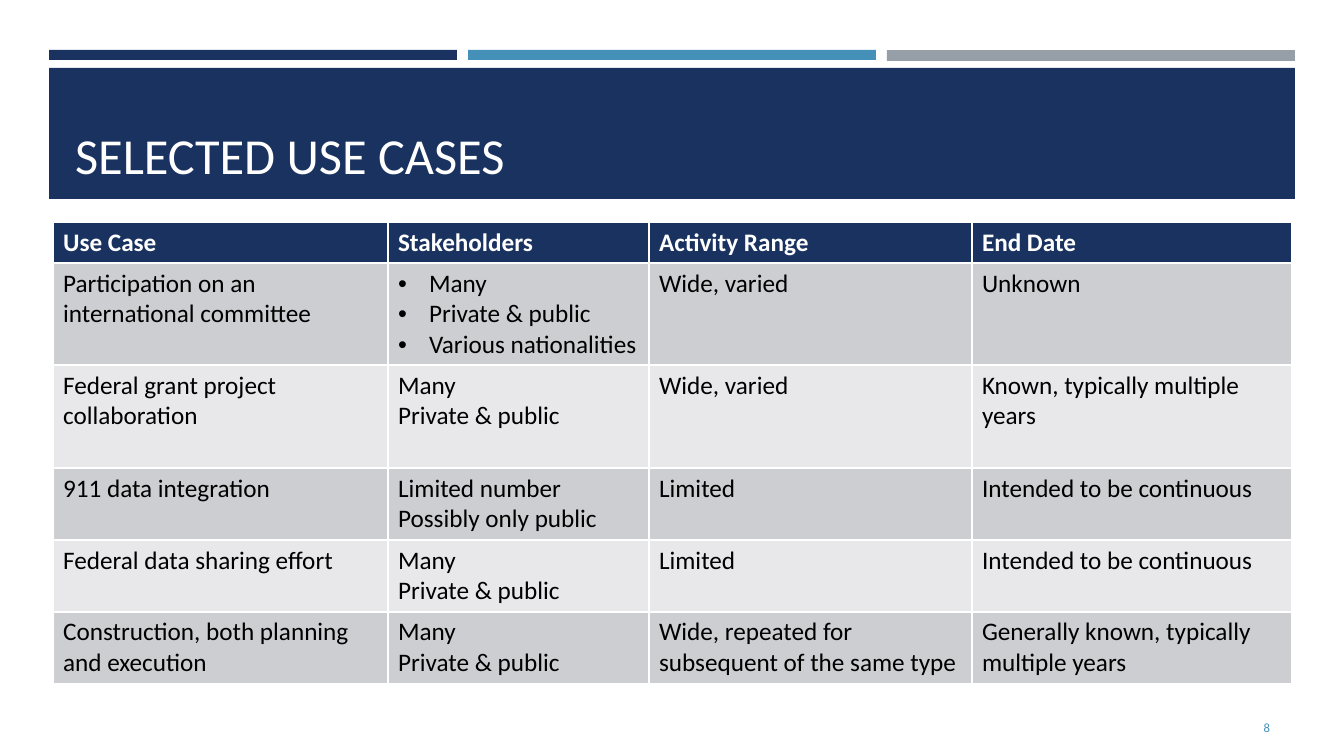
from lxml import etree
from pptx import Presentation
from pptx import util as u
from pptx.dml.color import RGBColor
from pptx.enum import shapes, text
from pptx.oxml import ns

TITLE = "SELECTED USE CASES"
PAGE_NUMBER = "8"
HEADER = ["Use Case", "Stakeholders", "Activity Range", "End Date"]
USE_CASES = [
    ("Participation on an international committee",
     ["Many", "Private & public", "Various nationalities"], "Wide, varied", "Unknown"),
    ("Federal grant project collaboration",
     "Many\nPrivate & public", "Wide, varied", "Known, typically multiple years"),
    ("911 data integration",
     "Limited number\nPossibly only public", "Limited", "Intended to be continuous"),
    ("Federal data sharing effort",
     "Many\nPrivate & public", "Limited", "Intended to be continuous"),
    ("Construction, both planning and execution",
     "Many\nPrivate & public", "Wide, repeated for subsequent of the same type",
     "Generally known, typically multiple years"),
]
COLORS = {
    "navy": "1A3260", "blue": "4590B8", "gray": "969FA7", "white": "FFFFFF",
    "black": "000000", "odd": "CDCED2", "even": "E8E8EA",
}
FONT = "Calibri"
SCALE = 914400 / 100.8
SLIDE_SIZE = (1344, 756)
BAR_LEFT, BAR_TOP, BAR_WIDTH, BAR_STEP = 49, 50, 408, 419
BAR_HEIGHTS = {"navy": 10, "blue": 10, "gray": 11}
BANNER_BOX = (49, 68, 1246, 131)
TITLE_BOX = (65, 78, 1215, 112)
NUMBER_BOX = (1164, 708, 116, 40)
TABLE_LEFT, TABLE_TOP = 53, 222
COLUMN_WIDTHS = [335, 261, 323, 320]
ROW_HEIGHTS = [41, 102, 103, 72, 72, 72]
BULLET_INDENT = 31


def px(length):
    return u.Emu(round(length * SCALE))


def box(values):
    return [px(value) for value in values]


def color(name):
    return RGBColor.from_string(COLORS[name])


def add_rectangle(slide, values, fill):
    shape = slide.shapes.add_shape(shapes.MSO_SHAPE.RECTANGLE, *box(values))
    shape.shadow.inherit = False
    shape.fill.solid()
    shape.fill.fore_color.rgb = color(fill)
    shape.line.fill.background()
    return shape


def write_text(frame, content, size=18, fill="black", bold=False,
               align=text.PP_ALIGN.LEFT, anchor=None):
    bulleted = isinstance(content, list)
    lines = content if bulleted else content.split("\n")
    frame.word_wrap = True
    if anchor is not None:
        frame.vertical_anchor = anchor
    for index, line in enumerate(lines):
        paragraph = frame.add_paragraph() if index else frame.paragraphs[0]
        paragraph.alignment = align
        run = paragraph.add_run()
        run.text = line
        run.font.name = FONT
        run.font.size = u.Pt(size)
        run.font.bold = bold
        run.font.color.rgb = color(fill)
        if bulleted:
            add_bullet(paragraph)


def add_bullet(paragraph):
    properties = paragraph._p.get_or_add_pPr()
    properties.set("marL", str(px(BULLET_INDENT)))
    properties.set("indent", str(-px(BULLET_INDENT)))
    etree.SubElement(properties, ns.qn("a:buFont")).set("typeface", "Arial")
    etree.SubElement(properties, ns.qn("a:buChar")).set("char", "•")


def add_header(slide):
    for index, (name, height) in enumerate(BAR_HEIGHTS.items()):
        left = BAR_LEFT + index * BAR_STEP
        add_rectangle(slide, (left, BAR_TOP, BAR_WIDTH, height), name)
    banner = add_rectangle(slide, BANNER_BOX, "navy")
    title = slide.shapes.title
    title.left, title.top, title.width, title.height = box(TITLE_BOX)
    banner.element.addnext(title.element)
    title.text_frame.auto_size = text.MSO_AUTO_SIZE.NONE
    write_text(title.text_frame, TITLE, size=36, fill="white",
               anchor=text.MSO_ANCHOR.BOTTOM)


def add_use_case_table(slide):
    rows = [HEADER, *USE_CASES]
    frame = slide.shapes.add_table(
        len(rows), len(HEADER),
        *box((TABLE_LEFT, TABLE_TOP, sum(COLUMN_WIDTHS), sum(ROW_HEIGHTS))))
    table = frame.table
    for column, width in zip(table.columns, COLUMN_WIDTHS):
        column.width = px(width)
    for row, height in zip(table.rows, ROW_HEIGHTS):
        row.height = px(height)
    for row_index, row in enumerate(rows):
        is_header = row_index == 0
        fill = "navy" if is_header else ("even", "odd")[row_index % 2]
        for column_index, content in enumerate(row):
            cell = table.cell(row_index, column_index)
            cell.fill.solid()
            cell.fill.fore_color.rgb = color(fill)
            write_text(cell.text_frame, content, bold=is_header,
                       fill="white" if is_header else "black")


def main():
    presentation = Presentation()
    presentation.slide_width, presentation.slide_height = box(SLIDE_SIZE)
    slide = presentation.slides.add_slide(presentation.slide_layouts[5])
    add_header(slide)
    number = slide.shapes.add_textbox(*box(NUMBER_BOX))
    write_text(number.text_frame, PAGE_NUMBER, size=9, fill="blue",
               align=text.PP_ALIGN.RIGHT, anchor=text.MSO_ANCHOR.MIDDLE)
    add_use_case_table(slide)
    presentation.save("out.pptx")


if __name__ == "__main__":
    main()
